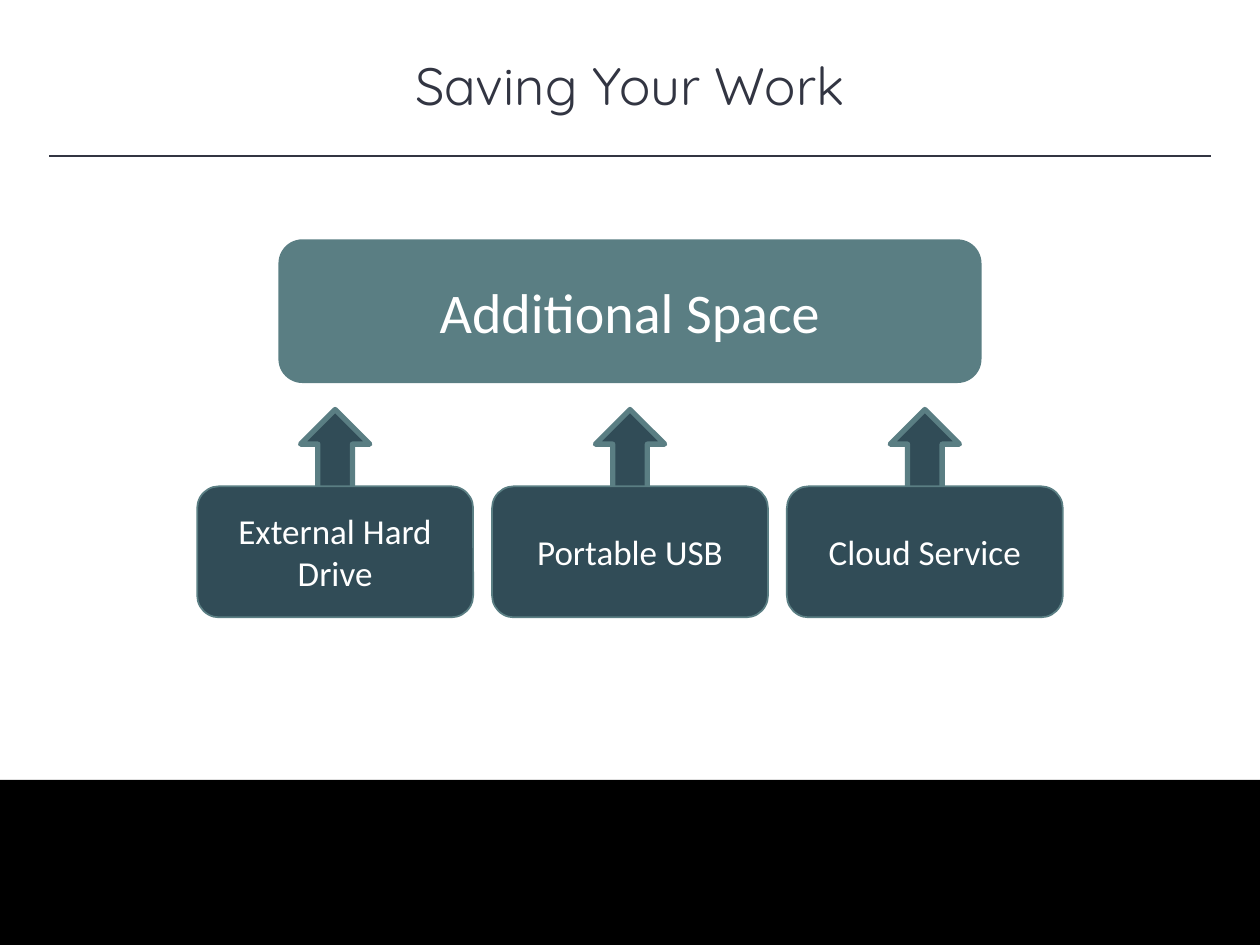
"""Build the "Saving Your Work" slide: three storage options feeding additional space."""
from lxml.etree import SubElement
from pptx import Presentation
from pptx.dml.color import RGBColor
from pptx.enum.shapes import MSO_CONNECTOR, MSO_SHAPE
from pptx.enum.text import MSO_ANCHOR, PP_ALIGN
from pptx.oxml.ns import qn
from pptx.util import Inches, Pt

TITLE = "Saving Your Work"
GOAL = "Additional Space"
OPTIONS = ["External Hard Drive", "Portable USB", "Cloud Service"]

INK = RGBColor(0x32, 0x35, 0x42)
TEAL = RGBColor(0x5A, 0x7E, 0x83)
SLATE = RGBColor(0x31, 0x4C, 0x57)
WHITE = RGBColor(0xFF, 0xFF, 0xFF)
BLACK = RGBColor(0x00, 0x00, 0x00)

SLIDE_W, SLIDE_H = 10, 7.5
CENTER = SLIDE_W / 2
OPTION_PITCH = 2.34
FOOTER_TOP = 6.19
RULE_MARGIN, RULE_Y = 0.39, 1.24

TITLE_FONT = {"name": "Quicksand", "size": Pt(30)}
GOAL_FONT = {"name": "Calibri", "size": Pt(32)}
OPTION_FONT = {"name": "Calibri", "size": Pt(20)}


def centered(middle, top, width, height):
    return [Inches(v) for v in (middle - width / 2, top, width, height)]


def write(frame, text, font_format, color):
    frame.word_wrap = True
    paragraph = frame.paragraphs[0]
    paragraph.text = text
    paragraph.alignment = PP_ALIGN.CENTER
    font = paragraph.runs[0].font
    for attribute, value in font_format.items():
        setattr(font, attribute, value)
    font.color.rgb = color


def add_block(slide, preset, bounds, fill, border=0, text="", font_format=None):
    block = slide.shapes.add_shape(preset, *bounds)
    block.shadow.inherit = False
    block.fill.solid()
    block.fill.fore_color.rgb = fill
    if border:
        block.line.color.rgb = TEAL
        block.line.width = Pt(border)
    else:
        block.line.fill.background()
    if text:
        block.text_frame.vertical_anchor = MSO_ANCHOR.MIDDLE
        write(block.text_frame, text, font_format, WHITE)


def main():
    deck = Presentation()
    deck.slide_width, deck.slide_height = Inches(SLIDE_W), Inches(SLIDE_H)
    slide = deck.slides.add_slide(deck.slide_layouts[6])
    slide.background.fill.solid()
    slide.background.fill.fore_color.rgb = WHITE

    middles = [CENTER + (i - (len(OPTIONS) - 1) / 2) * OPTION_PITCH
               for i in range(len(OPTIONS))]
    for middle in middles:
        add_block(slide, MSO_SHAPE.UP_ARROW, centered(middle, 3.25, 0.55, 0.65), SLATE, 3)

    title = slide.shapes.add_textbox(*centered(CENTER, 0.37, SLIDE_W, 0.61))
    write(title.text_frame, TITLE, TITLE_FONT, INK)
    add_block(slide, MSO_SHAPE.RECTANGLE,
              centered(CENTER, FOOTER_TOP, SLIDE_W, SLIDE_H - FOOTER_TOP), BLACK)

    rule = slide.shapes.add_connector(
        MSO_CONNECTOR.STRAIGHT, Inches(RULE_MARGIN), Inches(RULE_Y),
        Inches(SLIDE_W - RULE_MARGIN), Inches(RULE_Y))
    rule.line.color.rgb = INK
    rule.line.width = Pt(1)
    SubElement(rule._element.spPr, qn("a:effectLst"))

    add_block(slide, MSO_SHAPE.ROUNDED_RECTANGLE, centered(CENTER, 1.9, 5.58, 1.14),
              TEAL, text=GOAL, font_format=GOAL_FONT)
    for middle, option in zip(middles, OPTIONS):
        add_block(slide, MSO_SHAPE.ROUNDED_RECTANGLE, centered(middle, 3.86, 2.19, 1.04),
                  SLATE, 1, option, OPTION_FONT)

    deck.save("out.pptx")


if __name__ == "__main__":
    main()
